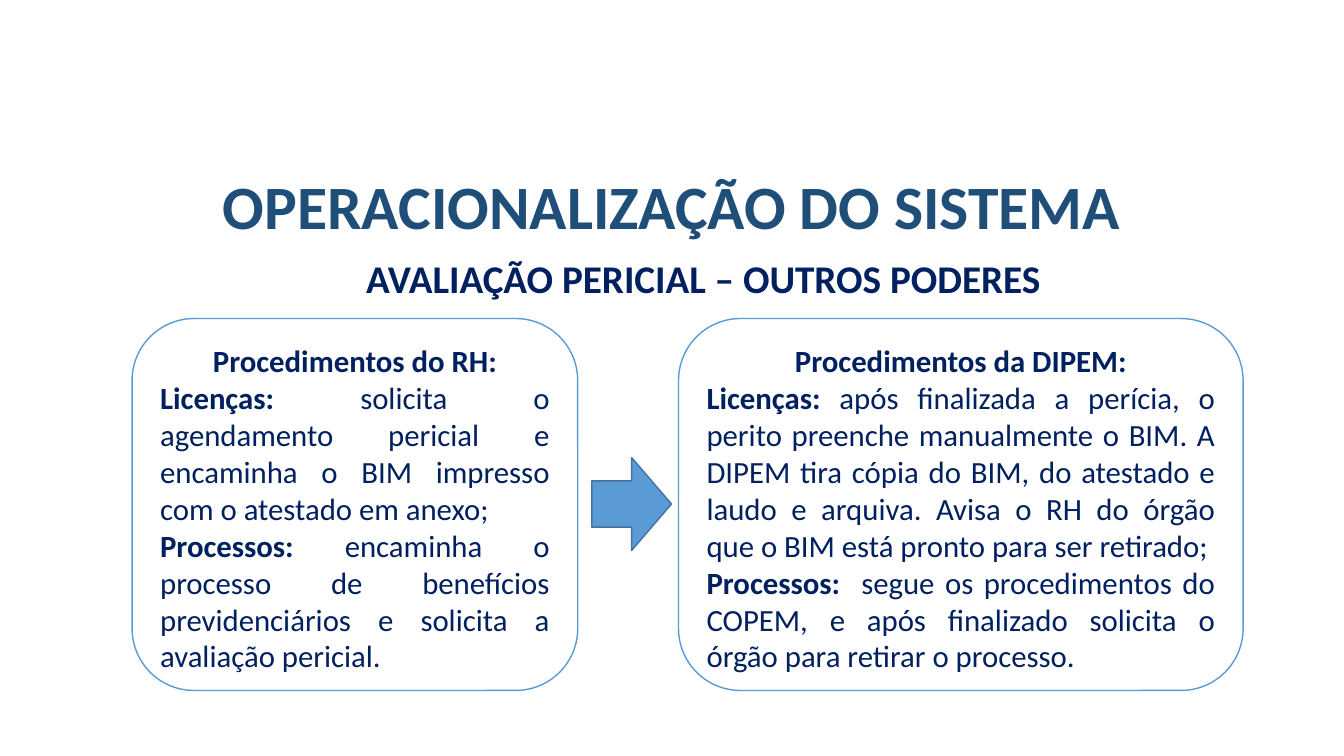
from dataclasses import dataclass

from pptx import Presentation
from pptx.dml.color import RGBColor
from pptx.enum import shapes, text
from pptx.util import Emu, Pt

PX = 9144  # EMU per px, 100 px to the inch
FONT = "Calibri"
NAVY, TITLE_BLUE = "002060", "1F4E79"
WHITE, BLUE, DARK_BLUE = "FFFFFF", "5B9BD5", "43739E"


@dataclass
class Box:
    left: int
    top: int
    width: int
    height: int

    def emu(self) -> list[Emu]:
        return [Emu(v * PX) for v in (self.left, self.top, self.width, self.height)]


@dataclass
class Panel:
    box: Box
    heading: str
    items: list[tuple[str, str]]  # bold lead, plain remainder


PANELS = [
    Panel(Box(131, 316, 442, 369), "Procedimentos do RH:", [
        ("Licenças: ", "solicita o agendamento pericial e encaminha o BIM "
                       "impresso com o atestado em anexo;"),
        ("Processos: ", "encaminha o processo de benefícios previdenciários "
                        "e solicita a avaliação pericial."),
    ]),
    Panel(Box(673, 316, 560, 369), "Procedimentos da DIPEM:", [
        ("Licenças: ", "após finalizada a perícia, o perito preenche manualmente "
                       "o BIM. A DIPEM tira cópia do BIM, do atestado e laudo e "
                       "arquiva. Avisa o RH do órgão que o BIM está pronto para "
                       "ser retirado;"),
        ("Processos:", "  segue os procedimentos do COPEM, e após finalizado "
                       "solicita o órgão para retirar o processo."),
    ]),
]


def rgb(value: str) -> RGBColor:
    return RGBColor.from_string(value)


def add_run(p, words: str, size: int, color: str, bold: bool) -> None:
    r = p.add_run()
    r.text = words
    r.font.name = FONT
    r.font.size = Pt(size)
    r.font.bold = bold
    r.font.color.rgb = rgb(color)


def write_heading(sp, words: str, size: int, color: str, anchor) -> None:
    tf = sp.text_frame
    tf.word_wrap = True
    tf.auto_size = text.MSO_AUTO_SIZE.NONE
    tf.vertical_anchor = anchor
    p = tf.paragraphs[0]
    p.alignment = text.PP_ALIGN.CENTER
    p.line_spacing = 0.9
    add_run(p, words, size, color, True)


def add_figure(s, kind, box: Box, fill: str, line: str):
    sp = s.shapes.add_shape(kind, *box.emu())
    sp.shadow.inherit = False
    sp.fill.solid()
    sp.fill.fore_color.rgb = rgb(fill)
    sp.line.color.rgb = rgb(line)
    sp.line.width = Pt(1)
    return sp


def add_panel(s, panel: Panel) -> None:
    sp = add_figure(s, shapes.MSO_SHAPE.ROUNDED_RECTANGLE, panel.box, WHITE, BLUE)
    tf = sp.text_frame
    tf.word_wrap = True
    tf.vertical_anchor = text.MSO_ANCHOR.TOP
    p = tf.paragraphs[0]
    p.alignment = text.PP_ALIGN.CENTER
    add_run(p, panel.heading, 22, NAVY, True)
    for lead, remainder in panel.items:
        p = tf.add_paragraph()
        p.alignment = text.PP_ALIGN.JUSTIFY
        add_run(p, lead, 22, NAVY, True)
        add_run(p, remainder, 22, NAVY, False)


def main() -> None:
    prs = Presentation()
    prs.slide_width, prs.slide_height = Emu(1333 * PX), Emu(750 * PX)
    s = prs.slides.add_slide(prs.slide_layouts[5])

    # Title and subtitle
    title = s.shapes.title
    title.left, title.top, title.width, title.height = Box(100, 163, 1133, 90).emu()
    write_heading(title, "OPERACIONALIZAÇÃO DO SISTEMA", 44, TITLE_BLUE,
                  text.MSO_ANCHOR.MIDDLE)
    subtitle = s.shapes.add_textbox(*Box(131, 253, 1133, 55).emu())
    write_heading(subtitle, "AVALIAÇÃO PERICIAL – OUTROS PODERES", 28, NAVY,
                  text.MSO_ANCHOR.TOP)

    # Procedure panels and the arrow between them
    for panel in PANELS:
        add_panel(s, panel)
    add_figure(s, shapes.MSO_SHAPE.RIGHT_ARROW, Box(587, 454, 79, 92), BLUE, DARK_BLUE)

    prs.save("out.pptx")


if __name__ == "__main__":
    main()
